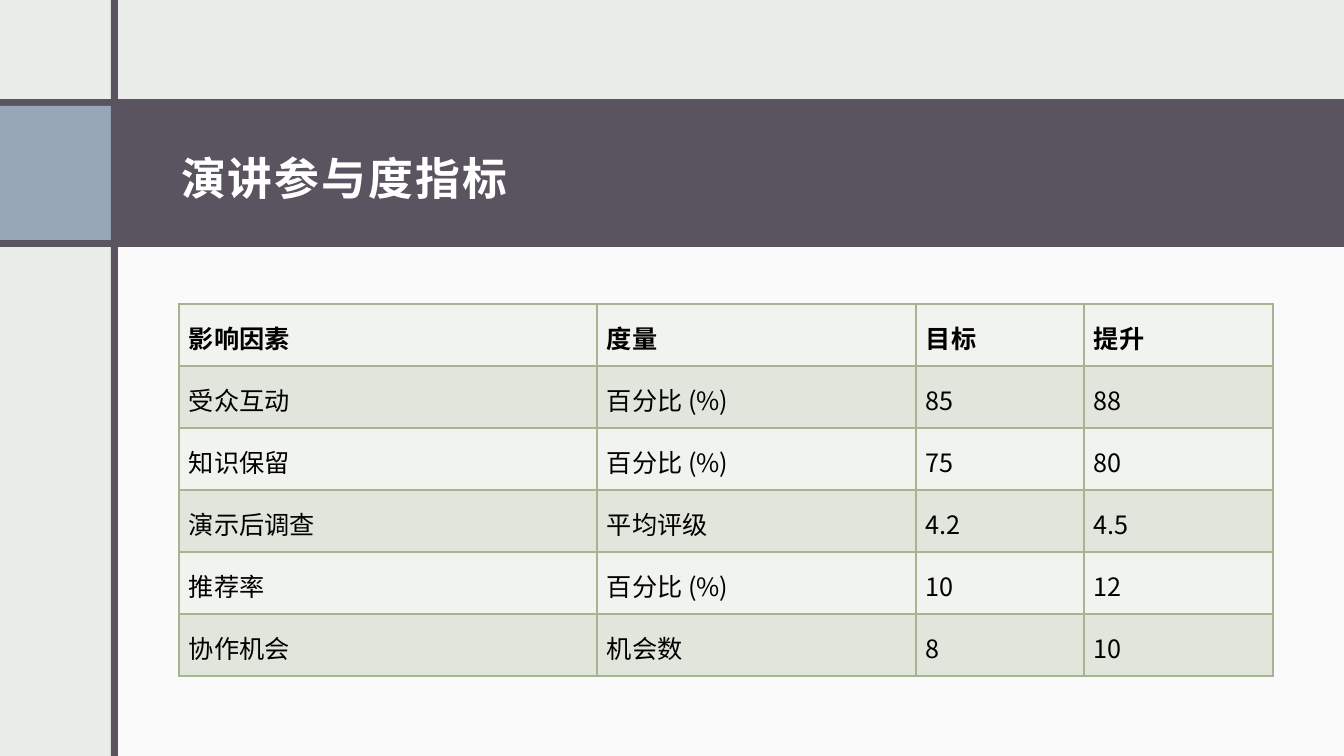
from dataclasses import dataclass

from lxml.etree import SubElement
from pptx import Presentation
from pptx.dml.color import RGBColor
from pptx.enum.shapes import MSO_SHAPE as Preset
from pptx.enum.text import MSO_ANCHOR as Anchor
from pptx.oxml import parse_xml
from pptx.oxml.ns import nsdecls, qn
from pptx.util import Emu, Pt

PX_PER_INCH = 100.8
FONT = "Noto Sans CJK SC"
PAPER, PANEL, PLUM, BLUE = "EBEDEB", "FAFAFA", "595460", "97A7B8"
GREEN, LIGHT_ROW, DARK_ROW = "A5B592", "F0F3EE", "E1E5DC"
WHITE, BLACK = "FFFFFF", "000000"


@dataclass(frozen=True)
class Block:
    left: int
    top: int
    width: int
    height: int
    color: str


BLOCKS = [
    Block(115, 235, 1229, 521, PANEL),
    Block(0, 99, 1344, 148, PLUM),
    Block(0, 106, 111, 134, BLUE),
    Block(111, 0, 7, 756, PLUM),
]
COLUMN_WIDTHS = [418, 319, 168, 189]
ROW_HEIGHT = 62
METRICS = [
    ["影响因素", "度量", "目标", "提升"],
    ["受众互动", "百分比 (%)", "85", "88"],
    ["知识保留", "百分比 (%)", "75", "80"],
    ["演示后调查", "平均评级", "4.2", "4.5"],
    ["推荐率", "百分比 (%)", "10", "12"],
    ["协作机会", "机会数", "8", "10"],
]


def px(length: int) -> Emu:
    return Emu(round(length * 914400 / PX_PER_INCH))


def paint(fill, color: str) -> None:
    fill.solid()
    fill.fore_color.rgb = RGBColor.from_string(color)


def set_insets(holder, sides: int, top: int, bottom: int) -> None:
    holder.margin_left = holder.margin_right = px(sides)
    holder.margin_top, holder.margin_bottom = px(top), px(bottom)
    holder.vertical_anchor = Anchor.MIDDLE


def write(paragraph, text: str, size: int, color: str, bold: bool, spacing: int = 0) -> None:
    paragraph.text = text
    font = paragraph.font
    font.size, font.bold, font.name = Pt(size), bold, FONT
    paint(font.fill, color)
    defaults = paragraph._p.pPr.find(qn("a:defRPr"))
    defaults.set("spc", str(spacing))
    SubElement(defaults, qn("a:ea")).set("typeface", FONT)


def draw_block(slide, block: Block) -> None:
    shape = slide.shapes.add_shape(
        Preset.RECTANGLE, px(block.left), px(block.top), px(block.width), px(block.height)
    )
    shape.shadow.inherit = False
    paint(shape.fill, block.color)
    shape.line.fill.background()


def draw_title(slide) -> None:
    title = slide.shapes.add_textbox(px(169), px(106), px(1104), px(134)).text_frame
    title.word_wrap = True
    set_insets(title, sides=12, top=20, bottom=10)
    write(title.paragraphs[0], "演讲参与度指标", 32, WHITE, True, spacing=150)


def add_borders(cell, color: str) -> None:
    properties = cell._tc.get_or_add_tcPr()
    for position, side in enumerate(("lnL", "lnR", "lnT", "lnB")):
        border = parse_xml(
            f'<a:{side} {nsdecls("a")} w="{Pt(1)}"><a:solidFill>'
            f'<a:srgbClr val="{color}"/></a:solidFill></a:{side}>'
        )
        properties.insert(position, border)


def draw_metrics(slide) -> None:
    table = slide.shapes.add_table(
        len(METRICS), len(COLUMN_WIDTHS), px(179), px(304),
        px(sum(COLUMN_WIDTHS)), px(ROW_HEIGHT * len(METRICS)),
    ).table
    table.first_row = table.horz_banding = False
    for column, width in zip(table.columns, COLUMN_WIDTHS):
        column.width = px(width)
    for row_index, metric in enumerate(METRICS):
        table.rows[row_index].height = px(ROW_HEIGHT)
        for column_index, text in enumerate(metric):
            cell = table.cell(row_index, column_index)
            set_insets(cell, sides=10, top=10, bottom=5)
            paint(cell.fill, DARK_ROW if row_index % 2 else LIGHT_ROW)
            add_borders(cell, GREEN)
            write(cell.text_frame.paragraphs[0], text, 18, BLACK, row_index == 0)


def main() -> None:
    deck = Presentation()
    deck.slide_width, deck.slide_height = px(1344), px(756)
    slide = deck.slides.add_slide(deck.slide_layouts[6])
    paint(slide.background.fill, PAPER)
    for block in BLOCKS:
        draw_block(slide, block)
    draw_title(slide)
    draw_metrics(slide)
    deck.save("out.pptx")


if __name__ == "__main__":
    main()
